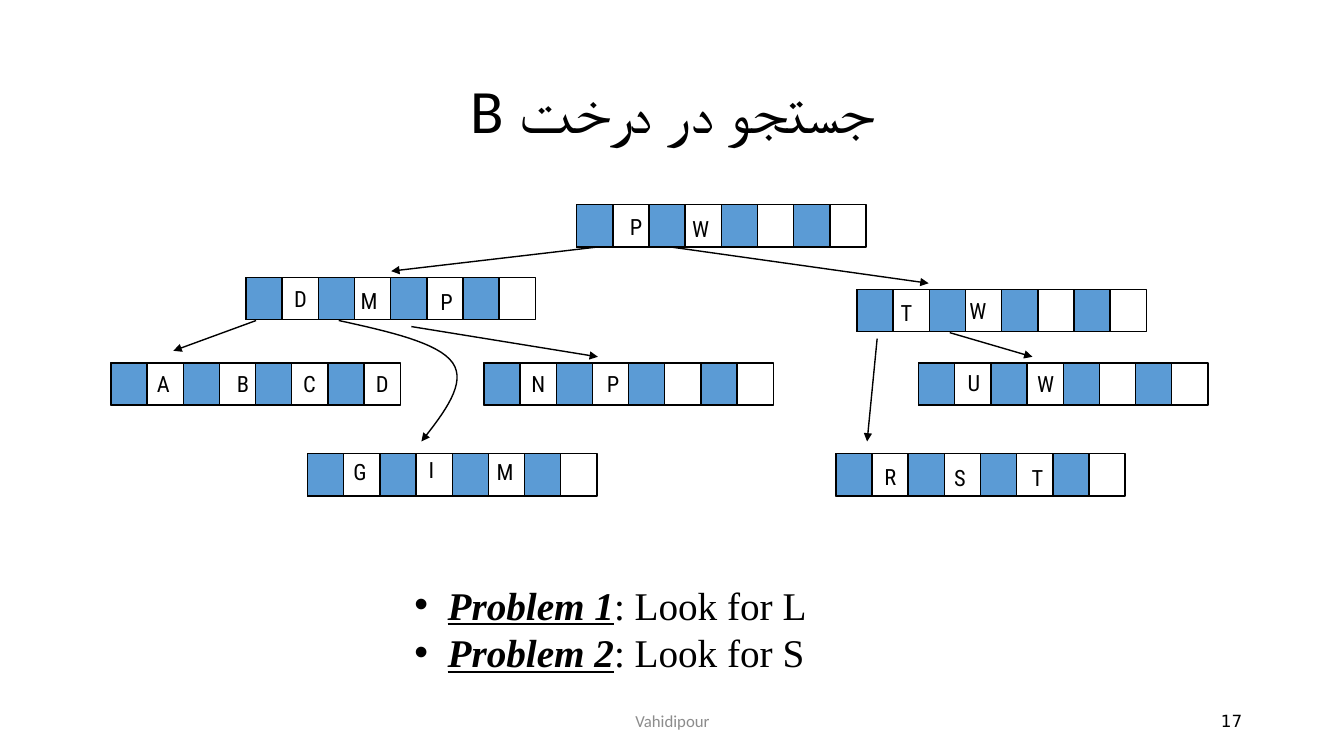
import pptx
import pptx.util
import pptx.dml.color
import pptx.enum.shapes
import pptx.enum.text
import pptx.oxml
from dataclasses import dataclass

Inches, Pt = pptx.util.Inches, pptx.util.Pt
RGB = pptx.dml.color.RGBColor
ALIGN = pptx.enum.text.PP_ALIGN
MIDDLE = pptx.enum.text.MSO_ANCHOR.MIDDLE


@dataclass(frozen=True)
class Theme:
    ink: RGB = RGB.from_string("000000")
    pointer: RGB = RGB.from_string("5B9BD5")
    muted: RGB = RGB.from_string("8C8C8C")
    main_font: str = "Calibri"
    key_font: str = "Roboto Condensed"
    list_font: str = "Times New Roman"
    number_font: str = "DejaVu Sans"
    title_size: int = 44
    list_size: int = 28
    key_size: int = 16
    footer_size: int = 12
    line: int = 1


THEME = Theme()
TITLE = "جستجو در درخت B"
PROBLEMS = [("Problem 1", ": Look for L"), ("Problem 2", ": Look for S")]
FOOTER, PAGE = "Vahidipour", "17"

# Node left and top, then its keys as (letter, centre x, text top)
NODES = [
    (5.72, 2.03, [("P", 6.31, 2.07), ("W", 6.95, 2.09)]),
    (2.44, 2.75, [("D", 2.98, 2.78), ("M", 3.66, 2.8), ("P", 4.43, 2.81)]),
    (8.5, 2.87, [("T", 8.99, 2.92), ("W", 9.7, 2.9)]),
    (9.11, 3.6, [("U", 9.66, 3.61), ("W", 10.37, 3.62)]),
    (4.8, 3.6, [("N", 5.34, 3.62), ("P", 6.08, 3.62)]),
    (1.1, 3.6, [("A", 1.62, 3.62), ("B", 2.41, 3.62), ("C", 3.07, 3.62), ("D", 3.79, 3.62)]),
    (8.29, 4.5, [("R", 8.83, 4.55), ("S", 9.52, 4.56), ("T", 10.29, 4.56)]),
    (3.05, 4.5, [("G", 3.57, 4.5), ("I", 4.28, 4.48), ("M", 5.01, 4.5)]),
]
ARROWS = [
    ((5.93, 2.45), (3.88, 2.69)),
    ((6.65, 2.45), (9.21, 2.81)),
    ((2.54, 3.18), (1.72, 3.48)),
    ((4.08, 3.24), (5.93, 3.54)),
    ((8.7, 3.36), (8.6, 4.38)),
    ((9.42, 3.3), (10.24, 3.54)),
]
# Bezier pieces of the curved arrow: start, two controls, end
CURVE = [
    ((3.36, 3.18), (3.86, 3.29), (4.35, 3.4), (4.49, 3.6)),
    ((4.49, 3.6), (4.63, 3.8), (4.41, 4.09), (4.18, 4.38)),
]
NODE_W, NODE_H, PAIRS = 2.87, 0.42, 4
CELL = NODE_W / (2 * PAIRS)
KEY_W, KEY_H = 0.6, 0.37
CURVE_STEPS = 16


def place(sp, left, top, width, height):
    sp.left, sp.top = Inches(left), Inches(top)
    sp.width, sp.height = Inches(width), Inches(height)


def style(p, font, size, color, align=None):
    p.font.name, p.font.size = font, Pt(size)
    p.font.color.rgb = color
    p.alignment = align


def add_label(slide, text, box, font, size, color, align, anchor=None, wrap=True):
    tf = slide.shapes.add_textbox(*map(Inches, box)).text_frame
    tf.word_wrap = wrap
    tf.vertical_anchor = anchor
    p = tf.paragraphs[0]
    p.text = text
    style(p, font, size, color, align)


def add_cell(slide, left, top, width, fill=None):
    sp = slide.shapes.add_shape(pptx.enum.shapes.MSO_SHAPE.RECTANGLE,
                                *map(Inches, (left, top, width, NODE_H)))
    sp.shadow.inherit = False
    if fill is None:
        sp.fill.background()
    else:
        sp.fill.solid()
        sp.fill.fore_color.rgb = fill
    sp.line.color.rgb = THEME.ink
    sp.line.width = Pt(THEME.line)


def add_node(slide, left, top):
    add_cell(slide, left, top, NODE_W)
    for i in range(PAIRS):
        add_cell(slide, left + 2 * i * CELL, top, CELL, THEME.pointer)


def finish_arrow(sp):
    """Give a connector or open outline its line, end arrowhead and no shadow."""
    sp.line.color.rgb = THEME.ink
    sp.line.width = Pt(THEME.line)
    ns = pptx.oxml.ns.qn
    pptx.oxml.xmlchemy.OxmlElement  # element factory used below
    tail = pptx.oxml.xmlchemy.OxmlElement("a:tailEnd")
    tail.set("type", "triangle")
    sp.line._get_or_add_ln().append(tail)
    props = sp._element.spPr
    if props.find(ns("a:effectLst")) is None:
        props.append(pptx.oxml.xmlchemy.OxmlElement("a:effectLst"))


def bezier(points, t):
    weights = ((1 - t) ** 3, 3 * t * (1 - t) ** 2, 3 * t * t * (1 - t), t ** 3)
    return tuple(Inches(sum(w * pt[axis] for w, pt in zip(weights, points)))
                 for axis in (0, 1))


def add_curve(slide):
    points = [bezier(piece, i / CURVE_STEPS)
              for piece in CURVE for i in range(1, CURVE_STEPS + 1)]
    start_x, start_y = map(Inches, CURVE[0][0])
    builder = slide.shapes.build_freeform(start_x, start_y)
    builder.add_line_segments(points, close=False)
    sp = builder.convert_to_shape()
    sp.fill.background()
    finish_arrow(sp)


def fill_title(sp):
    place(sp, 0.92, 0.4, 11.5, 1.45)
    sp.text_frame.vertical_anchor = MIDDLE
    p = sp.text_frame.paragraphs[0]
    p.text = TITLE
    style(p, THEME.main_font, THEME.title_size, THEME.ink, ALIGN.CENTER)
    p.line_spacing = 0.9
    p._p.get_or_add_pPr().set("rtl", "1")


def fill_problems(sp):
    place(sp, 4.01, 5.71, 5.42, 1.04)
    tf = sp.text_frame
    for i, (name, task) in enumerate(PROBLEMS):
        p = tf.paragraphs[0] if i == 0 else tf.add_paragraph()
        style(p, THEME.list_font, THEME.list_size, THEME.ink)
        p.space_before = Pt(0)
        p.line_spacing = Pt(33.8)
        props = p._p.get_or_add_pPr()
        props.set("marL", str(Inches(0.33)))
        props.set("indent", str(-Inches(0.33)))
        bullet = pptx.oxml.xmlchemy.OxmlElement("a:buChar")
        bullet.set("char", "•")
        props.insert_element_before(bullet, "a:tabLst", "a:defRPr", "a:extLst")
        r = p.add_run()
        r.text = name
        r.font.bold = r.font.italic = r.font.underline = True
        p.add_run().text = task


def main():
    prs = pptx.Presentation()
    prs.slide_width, prs.slide_height = Inches(13.33), Inches(7.5)
    slide = prs.slides.add_slide(prs.slide_layouts[1])
    fill_title(slide.shapes.title)
    fill_problems(slide.placeholders[1])
    add_label(slide, FOOTER, (4.42, 6.95, 4.5, 0.4), THEME.main_font,
              THEME.footer_size, THEME.muted, ALIGN.CENTER, MIDDLE)
    add_label(slide, PAGE, (9.42, 6.95, 3, 0.4), THEME.number_font,
              THEME.footer_size, THEME.ink, ALIGN.RIGHT, MIDDLE)
    for left, top, _ in NODES:
        add_node(slide, left, top)
    for start, end in ARROWS:
        line = slide.shapes.add_connector(pptx.enum.shapes.MSO_CONNECTOR.STRAIGHT,
                                          *map(Inches, start + end))
        finish_arrow(line)
    add_curve(slide)
    for _, _, keys in NODES:
        for letter, centre, top in keys:
            add_label(slide, letter, (centre - KEY_W / 2, top, KEY_W, KEY_H),
                      THEME.key_font, THEME.key_size, THEME.ink, ALIGN.CENTER, wrap=False)
    prs.save("out.pptx")


if __name__ == "__main__":
    main()
